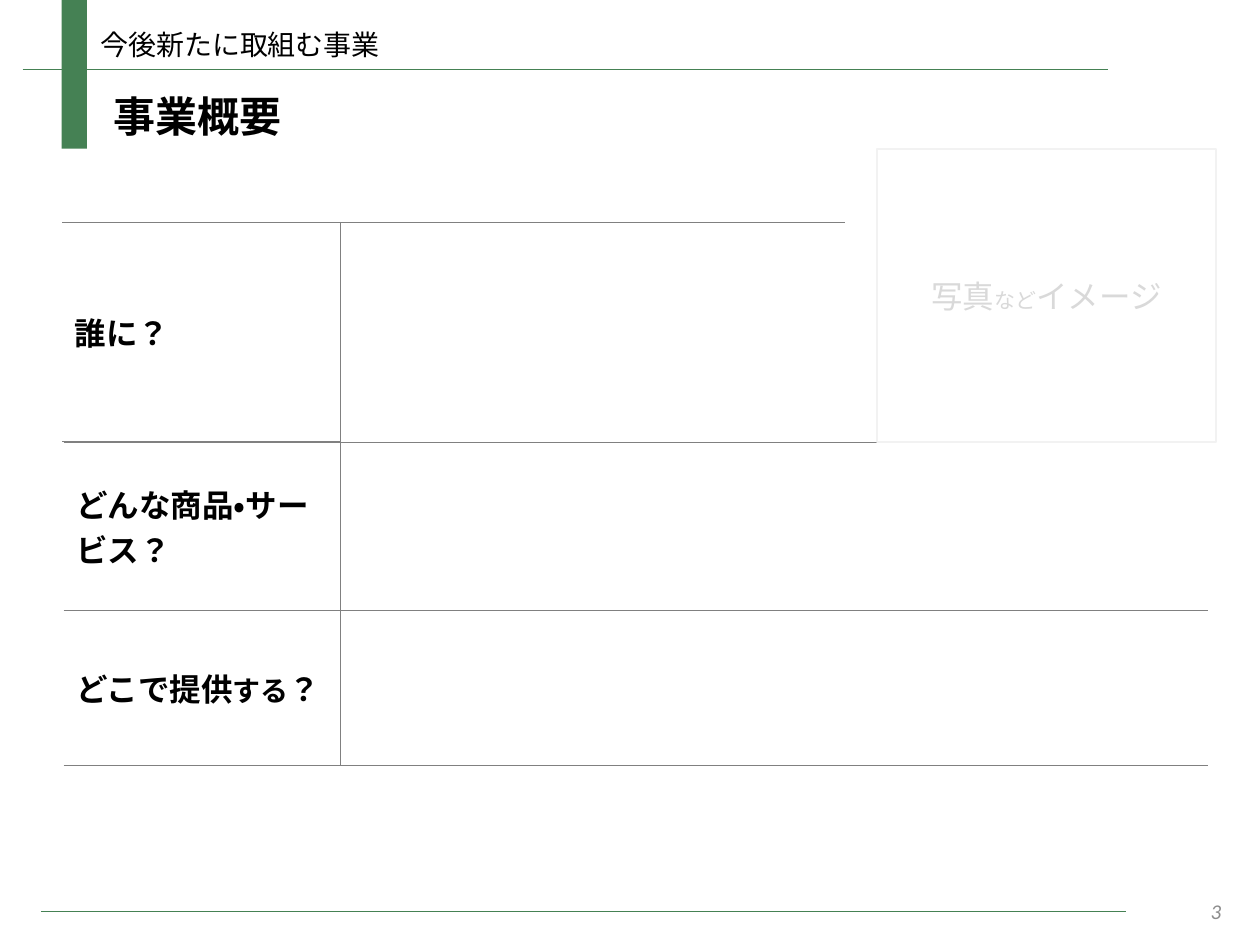
from lxml.etree import SubElement
from pptx import Presentation
from pptx.dml.color import RGBColor
from pptx.enum.lang import MSO_LANGUAGE_ID as Lang
from pptx.enum.shapes import MSO_CONNECTOR as Conn, MSO_SHAPE as Shape
from pptx.enum.text import MSO_ANCHOR as Anchor, MSO_AUTO_SIZE as Fit, PP_ALIGN as Align
from pptx.oxml.ns import qn
from pptx.util import Pt

GREEN, GRAY, BLACK = "458154", "808080", "000000"


def rgb(value):
    """Turn a hex string into a colour."""
    return RGBColor.from_string(value)


def write(tf, runs, font="Arial", color=BLACK, bold=False, italic=False,
          align=Align.LEFT, anchor=Anchor.TOP):
    """Write (text, size) runs into the first paragraph of a text frame."""
    tf.word_wrap = True
    tf.vertical_anchor = anchor
    p = tf.paragraphs[0]
    p.alignment = align
    for text, size in runs:
        r = p.add_run()
        r.text = text
        f = r.font
        f.name, f.size, f.bold, f.italic = font, Pt(size), bold, italic
        f.color.rgb = rgb(color)
        f.language_id = Lang.JAPANESE


def add_rule(s, x, y, w):
    """Draw a thin green horizontal line."""
    line = s.shapes.add_connector(Conn.STRAIGHT, Pt(x), Pt(y), Pt(x + w), Pt(y))
    line.line.color.rgb = rgb(GREEN)
    line.line.width = Pt(0.75)
    SubElement(line._element.spPr, qn("a:effectLst"))


def add_box(s, x, y, w, h):
    """Add a plain rectangle without fill, line or shadow."""
    sp = s.shapes.add_shape(Shape.RECTANGLE, Pt(x), Pt(y), Pt(w), Pt(h))
    sp.shadow.inherit = False
    sp.fill.background()
    sp.line.fill.background()
    return sp


def add_header(s, x, y, w, h):
    """Place the green tab, the section name and the slide title."""
    tab = add_box(s, x, y, 14.4, h)
    tab.fill.solid()
    tab.fill.fore_color.rgb = rgb(GREEN)
    add_rule(s, x - 22.3, y + 39.6, w)
    title = s.shapes.title
    title.left, title.top = Pt(x + 22.3), Pt(y + 48.2)
    title.width, title.height = Pt(235.4), Pt(36)
    title.text_frame.auto_size = Fit.NONE
    write(title.text_frame, [("事業概要", 24)], bold=True)
    section = s.shapes.add_textbox(Pt(x + 15.1), Pt(y + 12.2), Pt(270.7), Pt(26.6))
    write(section.text_frame, [("今後新たに取組む事業", 16)])


def set_borders(cell, sides):
    """Draw the given sides of a cell in gray and hide the others."""
    tc_pr = cell._tc.get_or_add_tcPr()
    for side in "LRTB":
        ln = SubElement(tc_pr, qn(f"a:ln{side}"), w=str(Pt(0.75)))
        if side in sides:
            fill = SubElement(ln, qn("a:solidFill"))
            SubElement(fill, qn("a:srgbClr"), val=GRAY)
        else:
            SubElement(ln, qn("a:noFill"))
    cell.fill.background()


def add_question_table(s, x, y, widths, heights, labels, answer_sides):
    """Add a table of bold questions with an empty answer column."""
    frame = s.shapes.add_table(len(labels), 2, Pt(x), Pt(y),
                               Pt(sum(widths)), Pt(sum(heights)))
    table = frame.table
    table.first_row = table.horz_banding = False
    for column, width in zip(table.columns, widths):
        column.width = Pt(width)
    for row, height, runs in zip(table.rows, heights, labels):
        row.height = Pt(height)
        question, answer = row.cells
        set_borders(question, "RTB")
        set_borders(answer, answer_sides)
        write(question.text_frame, runs, bold=True)
        question.vertical_anchor = Anchor.MIDDLE


def add_photo_frame(s, x, y, w, h):
    """Add the pale frame that reserves room for a photo."""
    sp = add_box(s, x, y, w, h)
    sp.line.color.rgb = rgb("F2F2F2")
    sp.line.width = Pt(1)
    write(sp.text_frame, [("写真", 18), ("など", 12), ("イメージ", 18)],
          font="Calibri", color="D9D9D9", align=Align.CENTER, anchor=Anchor.MIDDLE)


def add_footer(s, x, y, w, h):
    """Place the footer line and the page number."""
    add_rule(s, x, y + h / 2, 620)
    number = s.shapes.add_textbox(Pt(x + w - 162), Pt(y), Pt(162), Pt(h))
    write(number.text_frame, [("3", 12)], font="Calibri", color="8C8C8C",
          italic=True, align=Align.RIGHT, anchor=Anchor.MIDDLE)


def main():
    """Build the business overview slide."""
    prs = Presentation()
    prs.slide_width, prs.slide_height = Pt(720), Pt(540)
    s = prs.slides.add_slide(prs.slide_layouts[5])
    add_header(s, 35.3, 0, 620, 85)
    add_question_table(s, 36.4, 252.7, (158.4, 495.4), (96.2, 88.6),
                       [[("どんな商品・サービス？", 18)],
                        [("どこで提供", 18), ("する", 16), ("？", 18)]], "LTB")
    add_question_table(s, 35.6, 127.1, (158.9, 288.2), (125.3,),
                       [[("誰に？", 18)]], "LT")
    add_photo_frame(s, 501.1, 85, 193.7, 167.8)
    add_footer(s, 23.4, 506.4, 681.5, 28.8)
    prs.save("out.pptx")


if __name__ == "__main__":
    main()
